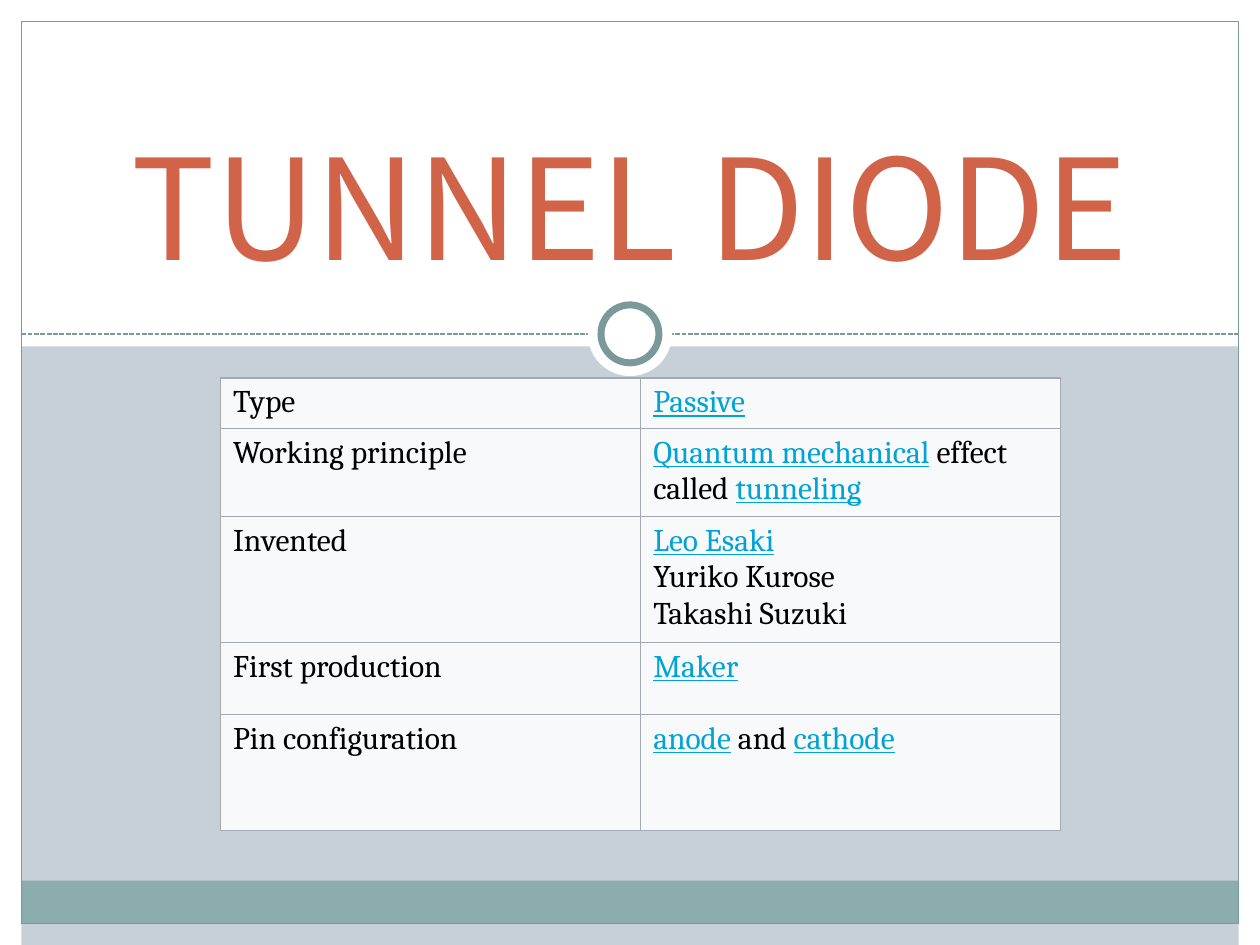
from pptx import Presentation
from pptx.util import Inches, Pt
from pptx.dml.color import RGBColor
from pptx.enum.dml import MSO_LINE
from pptx.enum.shapes import MSO_SHAPE, MSO_CONNECTOR
from pptx.enum.text import PP_ALIGN, MSO_ANCHOR
from lxml.etree import SubElement
from pptx.oxml.ns import qn

# Content: text inside [ ] is shown as a link
TITLE = "TUNNEL DIODE"
ROWS = [
    ("Type", "[Passive]", 0.39),
    ("Working principle", "[Quantum mechanical] effect called [tunneling]", 0.68),
    ("Invented", "[Leo Esaki]\nYuriko Kurose\nTakashi Suzuki", 0.97),
    ("First production", "[Maker]", 0.57),
    ("Pin configuration", "[anode] and [cathode]", 0.92),
]
COLORS = {
    "back": "C6D0D6", "white": "FFFFFF", "band": "8CADAE", "line": "7C999A",
    "title": "D16349", "text": "000000", "link": "00A3D6",
    "cell": "F8F9FA", "edge": "A2A9B1",
}
WIDE, HIGH, EDGE = 10, 7.5, 0.17
RULE = 2.65


def rgb(name):
    return RGBColor.from_string(COLORS[name])


def write(frame, text, size=18, font="Cambria", color="text", align=PP_ALIGN.LEFT):
    par = frame.paragraphs[0]
    par.alignment = align
    for i, part in enumerate(text.replace("]", "[").split("[")):
        link = i % 2 == 1
        for j, line in enumerate(part.split("\n")):
            if j:
                par.add_line_break()
            if not line:
                continue
            run = par.add_run()
            run.text = line
            run.font.size = Pt(size)
            run.font.name = font
            run.font.underline = link
            run.font.color.rgb = rgb("link" if link else color)


def draw(kind, x, y, w, h, fill=None, line=None, width=0.75):
    shape = slide.shapes.add_shape(kind, Inches(x), Inches(y), Inches(w), Inches(h))
    shape.shadow.inherit = False
    if fill:
        shape.fill.solid()
        shape.fill.fore_color.rgb = rgb(fill)
    else:
        shape.fill.background()
    if line:
        shape.line.color.rgb = rgb(line)
        shape.line.width = Pt(width)
    else:
        shape.line.fill.background()


def ring(size, **style):
    draw(MSO_SHAPE.OVAL, (WIDE - size) / 2, RULE - size / 2, size, size, **style)


def border(cell):
    props = cell._tc.get_or_add_tcPr()
    for i, side in enumerate(("a:lnL", "a:lnR", "a:lnT", "a:lnB")):
        line = props.makeelement(qn(side), {"w": str(Pt(0.75))})
        fill = SubElement(line, qn("a:solidFill"))
        SubElement(fill, qn("a:srgbClr"), val=COLORS["edge"])
        props.insert(i, line)


deck = Presentation()
deck.slide_width, deck.slide_height = Inches(WIDE), Inches(HIGH)
slide = deck.slides.add_slide(deck.slide_layouts[6])
slide.background.fill.solid()
slide.background.fill.fore_color.rgb = rgb("back")

# Margins, header and bottom band
RECT = MSO_SHAPE.RECTANGLE
inner = WIDE - 2 * EDGE
for x, w, h in [(WIDE - EDGE, EDGE, HIGH), (0, EDGE, HIGH), (0, WIDE, 2.75)]:
    draw(RECT, x, 0, w, h, fill="white")
draw(RECT, EDGE, 6.99, inner, 0.34, fill="band")

# Dashed rule
rule = slide.shapes.add_connector(
    MSO_CONNECTOR.STRAIGHT, Inches(EDGE), Inches(RULE), Inches(WIDE - EDGE), Inches(RULE))
rule.line.color.rgb = rgb("line")
rule.line.width = Pt(0.9)
rule.line.dash_style = MSO_LINE.SQUARE_DOT
SubElement(rule._element.spPr, qn("a:effectLst"))

# Frame and ring
draw(RECT, EDGE, EDGE, inner, HIGH - 2 * EDGE, line="line")
ring(0.67, fill="white")
ring(0.46, fill="white", line="line", width=4)

# Title
box = slide.shapes.add_textbox(Inches(0.75), Inches(0.42), Inches(8.5), Inches(1.92))
box.text_frame.word_wrap = True
box.text_frame.vertical_anchor = MSO_ANCHOR.BOTTOM
write(box.text_frame, TITLE, size=80, font="Noto Sans CJK SC", color="title",
      align=PP_ALIGN.CENTER)

# Table
total = sum(row[2] for row in ROWS)
table = slide.shapes.add_table(
    len(ROWS), 2, Inches(1.75), Inches(3), Inches(6.67), Inches(total)).table
table.first_row = table.horz_banding = False
for r, (*texts, high) in enumerate(ROWS):
    table.rows[r].height = Inches(high)
    for c, text in enumerate(texts):
        cell = table.cell(r, c)
        cell.fill.solid()
        cell.fill.fore_color.rgb = rgb("cell")
        border(cell)
        write(cell.text_frame, text)

deck.save("out.pptx")
